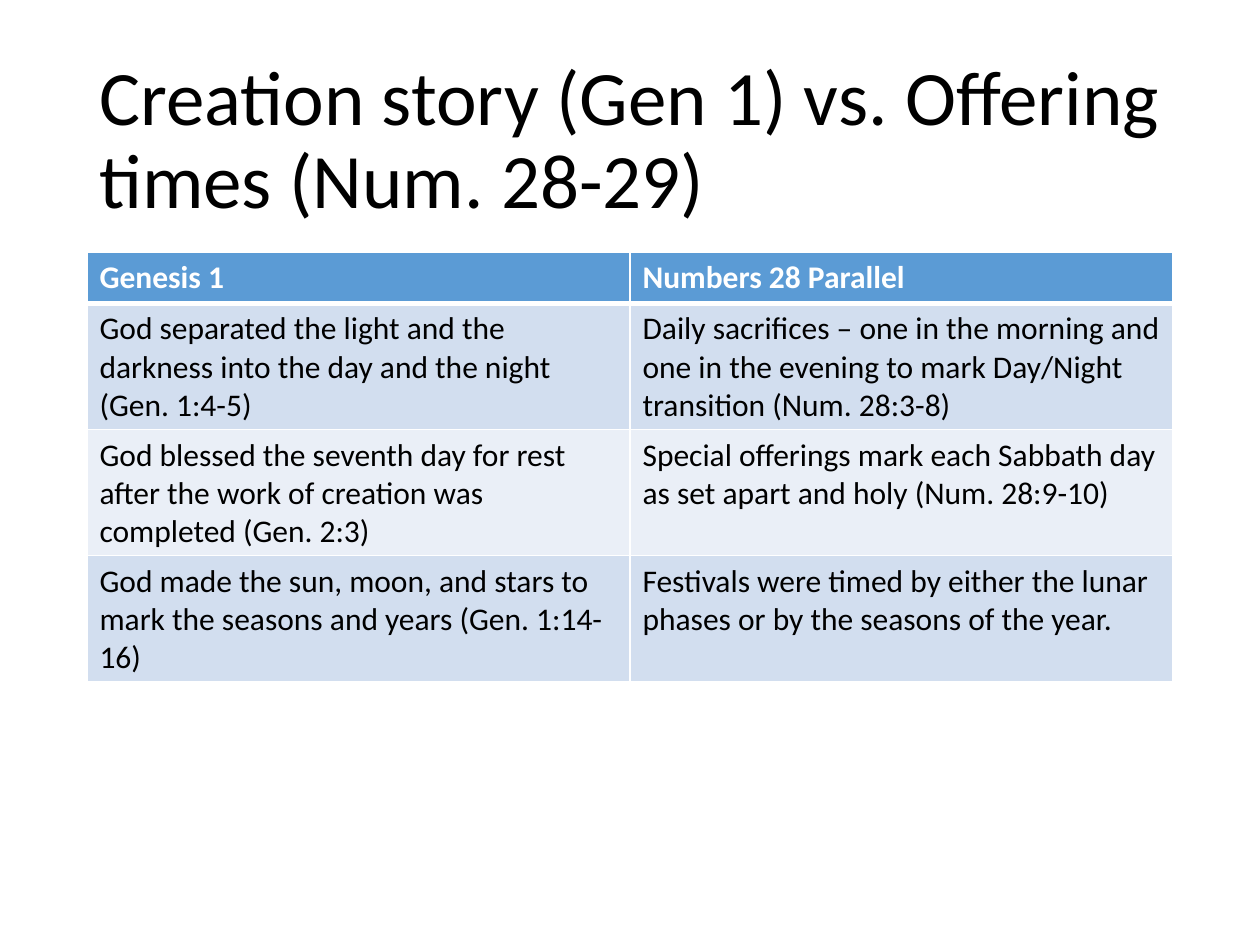
from lxml import etree
from pptx import Presentation
from pptx.dml.color import RGBColor
from pptx.enum import text
from pptx.oxml import ns
from pptx.util import Inches, Pt

BLACK = RGBColor(0x00, 0x00, 0x00)
WHITE = RGBColor(0xFF, 0xFF, 0xFF)
BLUE = RGBColor(0x5B, 0x9B, 0xD5)
BANDS = RGBColor(0xD2, 0xDE, 0xEF), RGBColor(0xEA, 0xEF, 0xF7)

LEFT, WIDTH = 0.69, 8.62
ROWS = [
    ("Genesis 1", "Numbers 28 Parallel"),
    ("God separated the light and the darkness into the day and the night (Gen. 1:4-5)",
     "Daily sacrifices – one in the morning and one in the evening to mark "
     "Day/Night transition (Num. 28:3-8)"),
    ("God blessed the seventh day for rest after the work of creation was completed (Gen. 2:3)",
     "Special offerings mark each Sabbath day as set apart and holy (Num. 28:9-10)"),
    ("God made the sun, moon, and stars to mark the seasons and years (Gen. 1:14-16)",
     "Festivals were timed by either the lunar phases or by the seasons of the year."),
]


class Deck:
    def __init__(self, slide, face="Calibri"):
        self.slide = slide
        self.face = face

    def label(self, frame, words, color, **style):
        para = frame.paragraphs[0]
        run = para.add_run()
        run.text = words
        for key, value in {"name": self.face, **style}.items():
            setattr(run.font, key, value)
        run.font.color.rgb = color
        return para

    def title(self, words, top, height):
        box = self.slide.shapes.add_textbox(
            Inches(LEFT), Inches(top), Inches(WIDTH), Inches(height))
        frame = box.text_frame
        frame.word_wrap = True
        frame.vertical_anchor = text.MSO_ANCHOR.MIDDLE
        para = self.label(frame, words, BLACK, size=Pt(44))
        para.line_spacing = 0.9

    def edge(self, cell, widths):
        """Draw white cell borders; widths maps a side (L, R, T, B) to points."""
        props = cell._tc.get_or_add_tcPr()
        for side, width in widths.items():
            line = etree.SubElement(props, ns.qn(f"a:ln{side}"), w=str(Pt(width)))
            fill = etree.SubElement(line, ns.qn("a:solidFill"))
            etree.SubElement(fill, ns.qn("a:srgbClr"), val=str(WHITE))

    def table(self, rows, top, heights):
        grid = self.slide.shapes.add_table(
            len(rows), len(rows[0]), Inches(LEFT), Inches(top),
            Inches(WIDTH), Inches(sum(heights))).table
        for r, (row, height) in enumerate(zip(rows, heights)):
            grid.rows[r].height = Inches(height)
            head = r == 0
            widths = {"L": 1, "R": 1, "T": 3 if r == 1 else 1, "B": 3 if head else 1}
            for c, words in enumerate(row):
                cell = grid.cell(r, c)
                self.edge(cell, widths)
                cell.fill.solid()
                cell.fill.fore_color.rgb = BLUE if head else BANDS[(r - 1) % 2]
                self.label(cell.text_frame, words, WHITE if head else BLACK,
                           size=Pt(18), bold=head)


def main():
    show = Presentation()
    show.slide_width, show.slide_height = Inches(10), Inches(7.5)
    deck = Deck(show.slides.add_slide(show.slide_layouts[6]))
    deck.title("Creation story (Gen 1) vs. Offering times (Num. 28-29)", 0.4, 1.45)
    deck.table(ROWS, 2, [0.41, 1, 1, 1])
    show.save("out.pptx")


if __name__ == "__main__":
    main()
